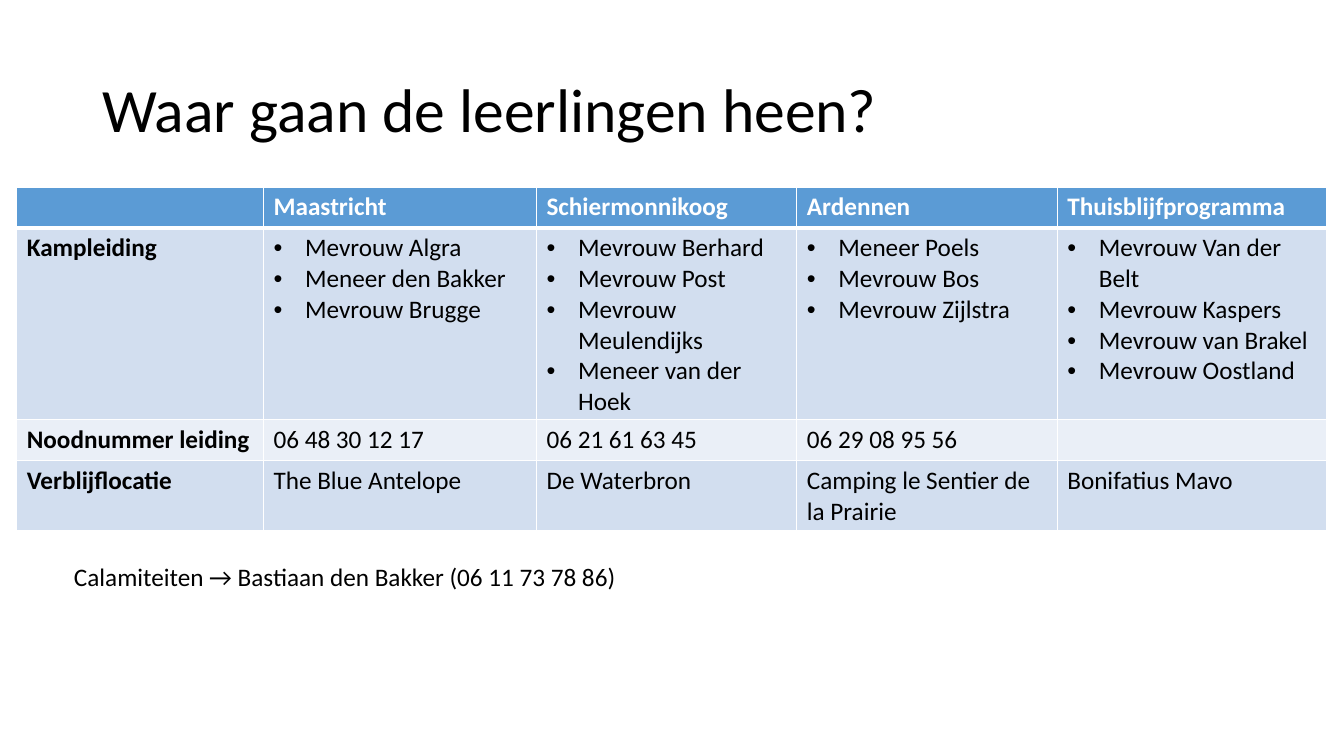
"""Build a slide listing the camp destinations, leaders and contact numbers."""
from lxml.etree import SubElement
from pptx import Presentation
from pptx.dml.color import RGBColor
from pptx.enum.text import MSO_ANCHOR, MSO_AUTO_SIZE
from pptx.oxml import parse_xml
from pptx.oxml.ns import nsdecls, qn
from pptx.util import Pt

PX = 9525
COLORS = {
    "text": "000000",
    "white": "FFFFFF",
    "header": "5B9BD5",
    "odd": "D2DEEF",
    "even": "EAEFF7",
}
COLUMN_WIDTHS = [235, 260, 248, 248, 257]
ROW_HEIGHT = 39
BULLET_INDENT = 30
ROWS = [
    ["", "Maastricht", "Schiermonnikoog", "Ardennen", "Thuisblijfprogramma"],
    [
        "Kampleiding",
        ["Mevrouw Algra", "Meneer den Bakker", "Mevrouw Brugge"],
        ["Mevrouw Berhard", "Mevrouw Post", "Mevrouw Meulendijks", "Meneer van der Hoek"],
        ["Meneer Poels", "Mevrouw Bos", "Mevrouw Zijlstra"],
        ["Mevrouw Van der Belt", "Mevrouw Kaspers", "Mevrouw van Brakel", "Mevrouw Oostland"],
    ],
    ["Noodnummer leiding", "06 48 30 12 17", "06 21 61 63 45", "06 29 08 95 56", ""],
    [
        "Verblijflocatie",
        "The Blue Antelope",
        "De Waterbron",
        "Camping le Sentier de la Prairie",
        "Bonifatius Mavo",
    ],
]


def write(paragraph, text, size=18, color="text", bold=False):
    paragraph.text = text
    formats = {"name": "Calibri", "size": Pt(size), "bold": bold}
    for name, value in formats.items():
        setattr(paragraph.font, name, value)
        for run in paragraph.runs:
            setattr(run.font, name, value)
    for run in paragraph.runs:
        run.font.color.rgb = RGBColor.from_string(COLORS[color])


def add_text(left, top, width, height, text, size, wrap):
    frame = slide.shapes.add_textbox(left * PX, top * PX, width * PX, height * PX).text_frame
    frame.word_wrap = wrap
    write(frame.paragraphs[0], text, size)
    return frame


presentation = Presentation()
presentation.slide_width = 1280 * PX
presentation.slide_height = 720 * PX
slide = presentation.slides.add_slide(presentation.slide_layouts[6])

title = add_text(88, 38, 1104, 139, "Waar gaan de leerlingen heen?", 44, True)
title.vertical_anchor = MSO_ANCHOR.MIDDLE
title.paragraphs[0].line_spacing = 0.9

table = slide.shapes.add_table(
    len(ROWS), len(COLUMN_WIDTHS), 16 * PX, 178 * PX,
    sum(COLUMN_WIDTHS) * PX, len(ROWS) * ROW_HEIGHT * PX,
).table
for column, width in zip(table.columns, COLUMN_WIDTHS):
    column.width = width * PX

for row_index, row in enumerate(ROWS):
    table.rows[row_index].height = ROW_HEIGHT * PX
    is_header = row_index == 0
    fill = "header" if is_header else "odd" if row_index % 2 else "even"
    for column_index, content in enumerate(row):
        cell = table.cell(row_index, column_index)
        cell.fill.solid()
        cell.fill.fore_color.rgb = RGBColor.from_string(COLORS[fill])
        is_list = isinstance(content, list)
        for line_index, line in enumerate(content if is_list else [content]):
            frame = cell.text_frame
            paragraph = frame.add_paragraph() if line_index else frame.paragraphs[0]
            if is_list:
                properties = paragraph._p.get_or_add_pPr()
                properties.set("marL", str(BULLET_INDENT * PX))
                properties.set("indent", str(-BULLET_INDENT * PX))
                SubElement(properties, qn("a:buFont"), typeface="Arial")
                SubElement(properties, qn("a:buChar"), char="•")
            write(paragraph, line, color="white" if is_header else "text",
                  bold=is_header or column_index == 0)
        for position, side in enumerate("LRTB"):
            thick = (is_header and side == "B") or (row_index == 1 and side == "T")
            border = parse_xml(
                f'<a:ln{side} {nsdecls("a")} w="{Pt(3 if thick else 1)}"><a:solidFill>'
                f'<a:srgbClr val="{COLORS["white"]}"/></a:solidFill></a:ln{side}>'
            )
            cell._tc.get_or_add_tcPr().insert(position, border)

emergency = add_text(
    61, 530, 543, 38, "Calamiteiten → Bastiaan den Bakker (06 11 73 78 86)", 18, False
)
emergency.auto_size = MSO_AUTO_SIZE.SHAPE_TO_FIT_TEXT

presentation.save("out.pptx")
